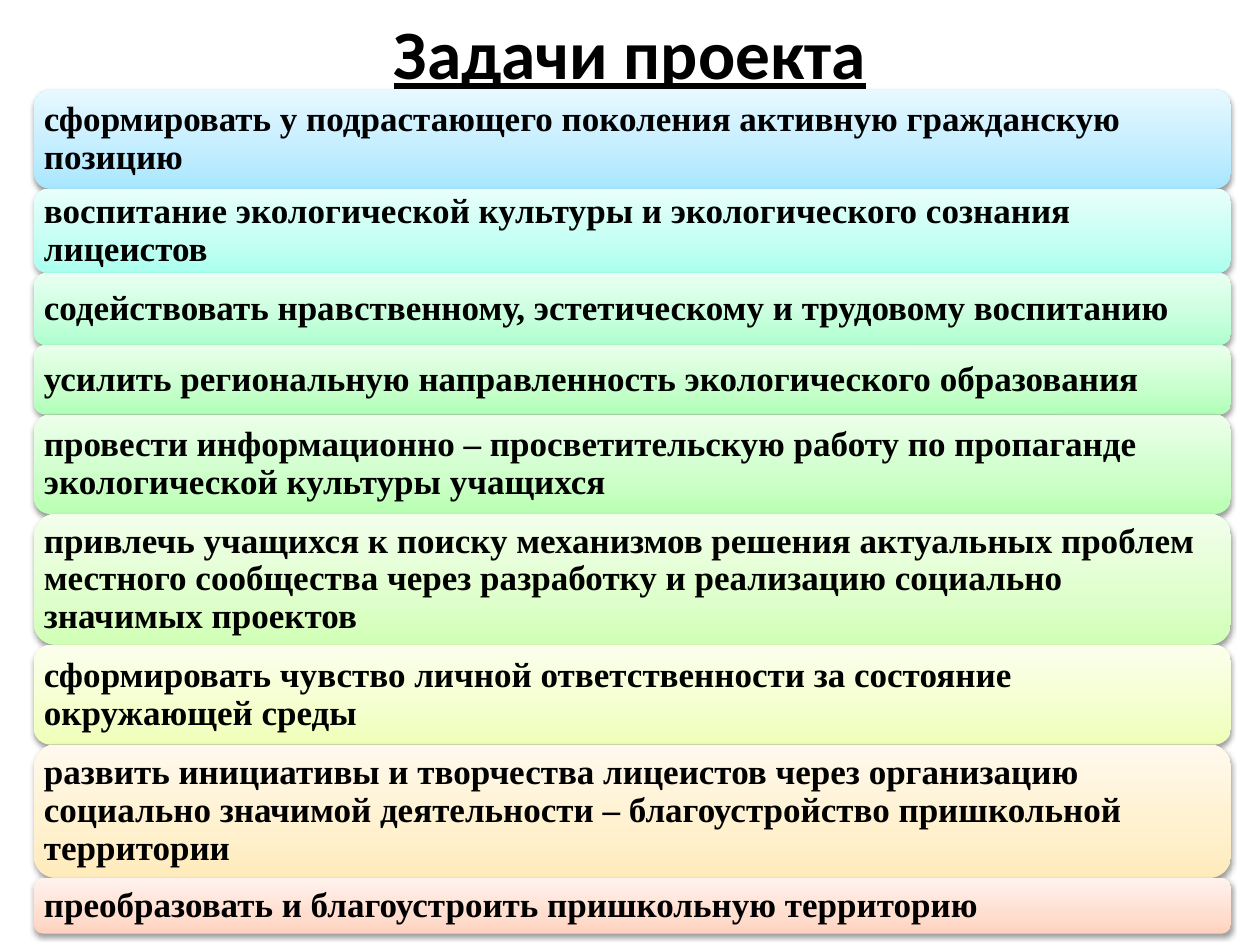
import copy

import lxml.etree
import pptx
import pptx.dml.color
import pptx.enum.shapes
import pptx.enum.text
import pptx.oxml
import pptx.oxml.ns
import pptx.util

Inches = pptx.util.Inches
Pt = pptx.util.Pt
RGBColor = pptx.dml.color.RGBColor
qn = pptx.oxml.ns.qn

BLACK = RGBColor(0x00, 0x00, 0x00)
SKY = [RGBColor(0xA7, 0xE6, 0xFF), RGBColor(0xC1, 0xED, 0xFF), RGBColor(0xE7, 0xF8, 0xFF)]
AQUA = [RGBColor(0xAA, 0xFF, 0xEF), RGBColor(0xC3, 0xFF, 0xF3), RGBColor(0xE8, 0xFF, 0xFA)]
MINT = [RGBColor(0xAD, 0xFF, 0xCD), RGBColor(0xC5, 0xFF, 0xDB), RGBColor(0xE9, 0xFF, 0xF1)]
GREEN = [RGBColor(0xB0, 0xFF, 0xB7), RGBColor(0xC7, 0xFF, 0xCC), RGBColor(0xEA, 0xFF, 0xEB)]
LEAF = [RGBColor(0xB9, 0xFF, 0xB2), RGBColor(0xCD, 0xFF, 0xC9), RGBColor(0xEC, 0xFF, 0xEA)]
LIME = [RGBColor(0xD1, 0xFF, 0xB5), RGBColor(0xDE, 0xFF, 0xCB), RGBColor(0xF2, 0xFF, 0xEB)]
YELLOW = [RGBColor(0xF0, 0xFF, 0xB8), RGBColor(0xF4, 0xFF, 0xCD), RGBColor(0xFB, 0xFF, 0xEC)]
SAND = [RGBColor(0xFF, 0xEB, 0xBA), RGBColor(0xFF, 0xF1, 0xCE), RGBColor(0xFF, 0xF9, 0xED)]
PEACH = [RGBColor(0xFF, 0xD2, 0xBD), RGBColor(0xFF, 0xDE, 0xD0), RGBColor(0xFF, 0xF2, 0xED)]
STOP_POSITIONS = [0, 0.35, 1]
TEXT_INSET = 0.08
CORNER_INSET = 0.05

tasks = [
    (0.79, SKY, "сформировать у подрастающего поколения активную гражданскую позицию"),
    (0.67, AQUA, "воспитание экологической культуры и экологического сознания лицеистов"),
    (0.57, MINT, "содействовать нравственному, эстетическому и трудовому воспитанию"),
    (0.55, GREEN, "усилить региональную направленность экологического образования"),
    (0.79, LEAF, "провести информационно – просветительскую работу по пропаганде экологической культуры учащихся"),
    (1.04, LIME, "привлечь учащихся к поиску механизмов решения актуальных проблем местного сообщества "
                 "через разработку и реализацию социально значимых проектов"),
    (0.79, YELLOW, "сформировать чувство личной ответственности за состояние окружающей среды"),
    (1.06, SAND, "развить инициативы и творчества лицеистов через организацию социально значимой "
                 "деятельности – благоустройство пришкольной территории"),
    (0.44, PEACH, "преобразовать и благоустроить пришкольную территорию"),
]


def add_shadow(shape):
    shape.shadow.inherit = False
    effects = shape._element.spPr.find(qn("a:effectLst"))
    shadow = lxml.etree.SubElement(
        effects, qn("a:outerShdw"), blurRad=str(Pt(3.1)), dist=str(Pt(1.6)), dir="5400000", rotWithShape="0")
    color = lxml.etree.SubElement(shadow, qn("a:srgbClr"), val=str(BLACK))
    lxml.etree.SubElement(color, qn("a:alpha"), val="38000")


def fill_gradient(shape, colors):
    shape.fill.gradient()
    shape.fill.gradient_angle = 90
    stop_list = shape._element.spPr.find(qn("a:gradFill")).find(qn("a:gsLst"))
    stop_list.append(copy.deepcopy(stop_list[0]))
    for stop, position, color in zip(shape.fill.gradient_stops, STOP_POSITIONS, colors):
        stop.position = position
        stop.color.rgb = color


presentation = pptx.Presentation()
presentation.slide_width = Inches(10)
presentation.slide_height = Inches(7.5)
slide = presentation.slides.add_slide(presentation.slide_layouts[5])

title = slide.shapes.title
title.left, title.top, title.width, title.height = Inches(0.5), Inches(0.08), Inches(9), Inches(1.25)
title.text_frame.text = "Задачи проекта"
title.text_frame.vertical_anchor = pptx.enum.text.MSO_ANCHOR.TOP
title.text_frame.margin_top = 0
paragraph = title.text_frame.paragraphs[0]
paragraph.alignment = pptx.enum.text.PP_ALIGN.CENTER
paragraph.font.name = "Calibri"
paragraph.font.size = Pt(39.6)
paragraph.font.bold = True
paragraph.font.underline = True
paragraph.font.color.rgb = BLACK

top = 0.71
for height, colors, text in tasks:
    shape = slide.shapes.add_shape(
        pptx.enum.shapes.MSO_SHAPE.ROUNDED_RECTANGLE, Inches(0.27), Inches(top), Inches(9.5), Inches(height))
    fill_gradient(shape, colors)
    shape.line.fill.background()
    add_shadow(shape)

    frame = shape.text_frame
    frame.word_wrap = True
    frame.vertical_anchor = pptx.enum.text.MSO_ANCHOR.MIDDLE
    margin = Inches(TEXT_INSET - CORNER_INSET * height)
    frame.margin_left = frame.margin_right = frame.margin_top = frame.margin_bottom = margin
    frame.text = text
    paragraph = frame.paragraphs[0]
    paragraph.alignment = pptx.enum.text.PP_ALIGN.LEFT
    paragraph.line_spacing = 0.9
    paragraph.font.name = "Times New Roman"
    paragraph.font.size = Pt(20)
    paragraph.font.bold = True
    paragraph.font.color.rgb = BLACK
    top += height

presentation.save("out.pptx")
